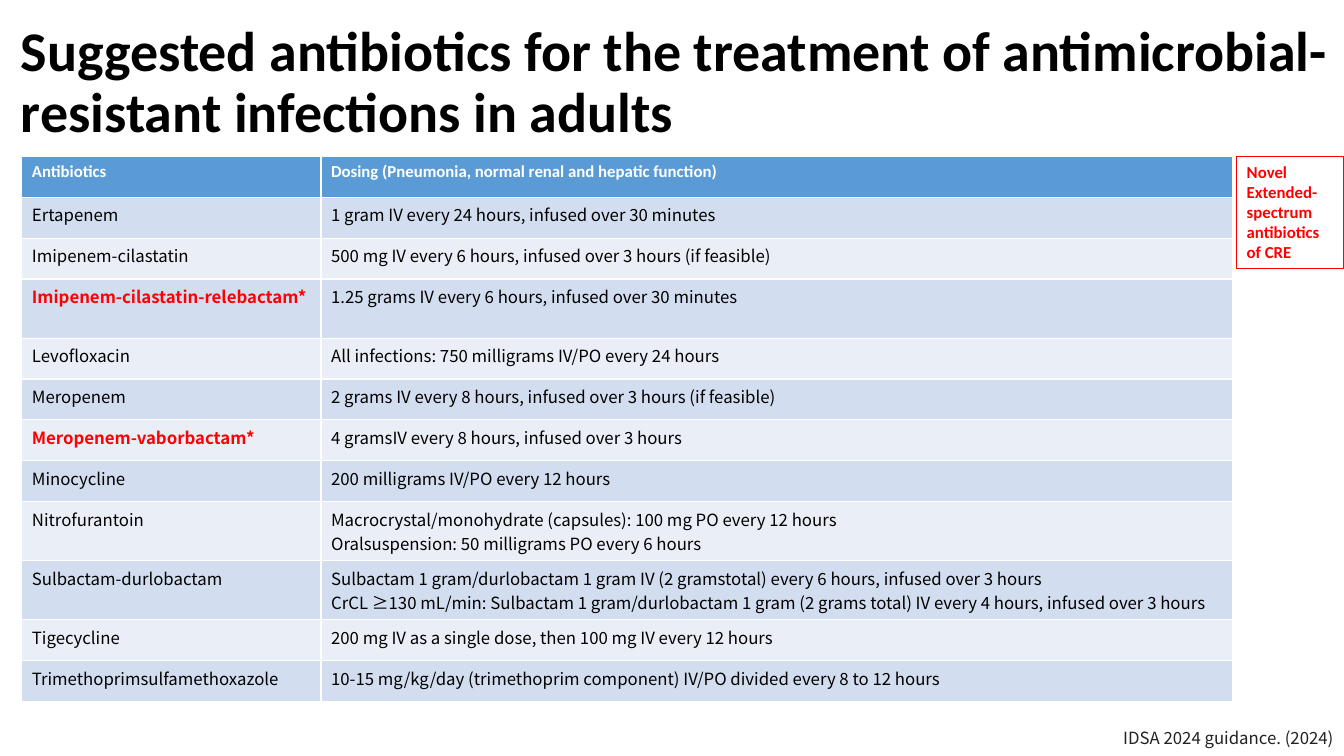
from pptx import Presentation
from pptx.dml.color import RGBColor
from pptx.enum.shapes import MSO_SHAPE as SHAPE
from pptx.enum.text import MSO_ANCHOR as ANCHOR, PP_ALIGN as ALIGN
from pptx.util import Cm, Pt

SANS = "Calibri"
BODY = "Noto Sans CJK KR"


def rgb(color):
    return RGBColor.from_string(color)


def write(tf, lines, size, font, color, bold=False):
    tf.text = "\n".join(lines)
    for p in tf.paragraphs:
        p.font.size = Pt(size)
        p.font.name = font
        p.font.bold = bold
        p.font.color.rgb = rgb(color)
        p.alignment = ALIGN.LEFT


prs = Presentation()
prs.slide_width, prs.slide_height = Cm(33.87), Cm(19.05)
s = prs.slides.add_slide(prs.slide_layouts[6])

title = s.shapes.add_textbox(Cm(0.28), Cm(0.28), Cm(33.58), Cm(3.68))
tf = title.text_frame
tf.word_wrap = True
tf.vertical_anchor = ANCHOR.MIDDLE
write(tf, ["Suggested antibiotics for the treatment of antimicrobial-resistant infections in adults"],
      40, SANS, "000000", True)
tf.paragraphs[0].line_spacing = 0.9

rows = [
    ("Antibiotics", ["Dosing (Pneumonia, normal renal and hepatic function)"]),
    ("Ertapenem", ["1 gram IV every 24 hours, infused over 30 minutes"]),
    ("Imipenem-cilastatin", ["500 mg IV every 6 hours, infused over 3 hours (if feasible)"]),
    ("Imipenem-cilastatin-relebactam*", ["1.25 grams IV every 6 hours, infused over 30 minutes"]),
    ("Levofloxacin", ["All infections: 750 milligrams IV/PO every 24 hours"]),
    ("Meropenem", ["2 grams IV every 8 hours, infused over 3 hours (if feasible)"]),
    ("Meropenem-vaborbactam*", ["4 gramsIV every 8 hours, infused over 3 hours"]),
    ("Minocycline", ["200 milligrams IV/PO every 12 hours"]),
    ("Nitrofurantoin", ["Macrocrystal/monohydrate (capsules): 100 mg PO every 12 hours",
                        "Oralsuspension: 50 milligrams PO every 6 hours"]),
    ("Sulbactam-durlobactam", [
        "Sulbactam 1 gram/durlobactam 1 gram IV (2 gramstotal) every 6 hours, infused over 3 hours",
        "CrCL ≥130 mL/min: Sulbactam 1 gram/durlobactam 1 gram (2 grams total) IV every 4 hours, "
        "infused over 3 hours"]),
    ("Tigecycline", ["200 mg IV as a single dose, then 100 mg IV every 12 hours"]),
    ("Trimethoprimsulfamethoxazole",
     ["10-15 mg/kg/day (trimethoprim component) IV/PO divided every 8 to 12 hours"]),
]
tall_rows = (3, 8, 9)

table = s.shapes.add_table(len(rows), 2, Cm(0.55), Cm(3.94), Cm(30.5), Cm(13.74)).table
table.columns[0].width = Cm(7.54)
table.columns[1].width = Cm(22.96)
for i, (drug, dosing) in enumerate(rows):
    table.rows[i].height = Cm(1.49 if i in tall_rows else 1.03)
    fill = "5B9BD5" if i == 0 else ("EAEFF7", "D2DEEF")[i % 2]
    for j, lines in enumerate(([drug], dosing)):
        cell = table.cell(i, j)
        cell.fill.solid()
        cell.fill.fore_color.rgb = rgb(fill)
        if i == 0:
            write(cell.text_frame, lines, 12, SANS, "FFFFFF", True)
        elif lines[0].endswith("*"):
            write(cell.text_frame, lines, 12, BODY, "FF0000", True)
        else:
            write(cell.text_frame, lines, 12, BODY, "000000")

note = s.shapes.add_shape(SHAPE.RECTANGLE, Cm(31.17), Cm(3.94), Cm(2.69), Cm(2.82))
note.shadow.inherit = False
note.fill.background()
note.line.color.rgb = rgb("FF0000")
note.line.width = Pt(0.75)
tf = note.text_frame
tf.word_wrap = True
tf.vertical_anchor = ANCHOR.TOP
write(tf, ["Novel", "Extended-spectrum", "antibiotics", "of CRE"], 12, SANS, "FF0000", True)

source = s.shapes.add_textbox(Cm(27.94), Cm(18.21), Cm(5.92), Cm(0.76))
tf = source.text_frame
tf.word_wrap = False
write(tf, ["IDSA 2024 guidance. (2024)"], 12, BODY, "212121")
tf.paragraphs[0].alignment = ALIGN.RIGHT

prs.save("out.pptx")
